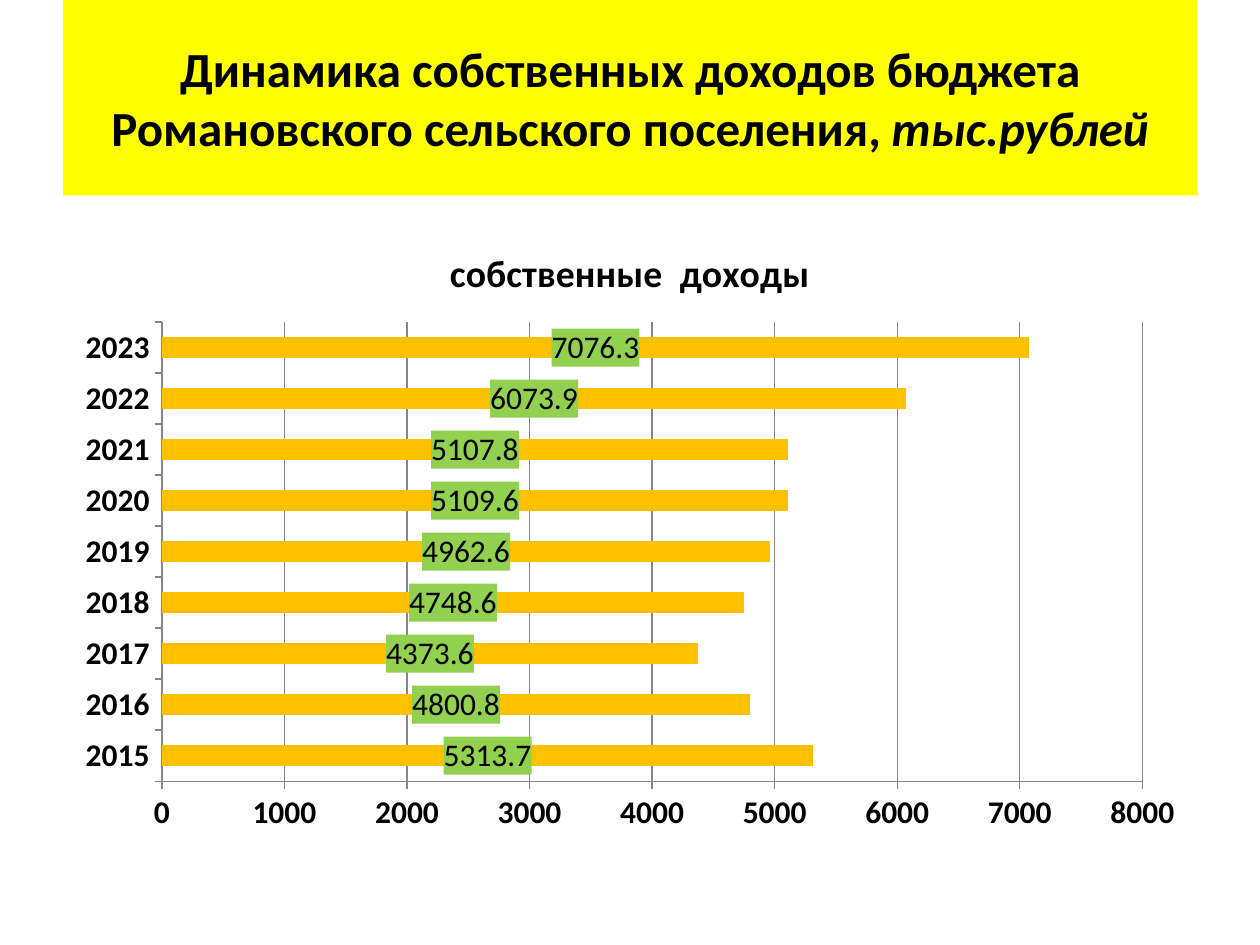
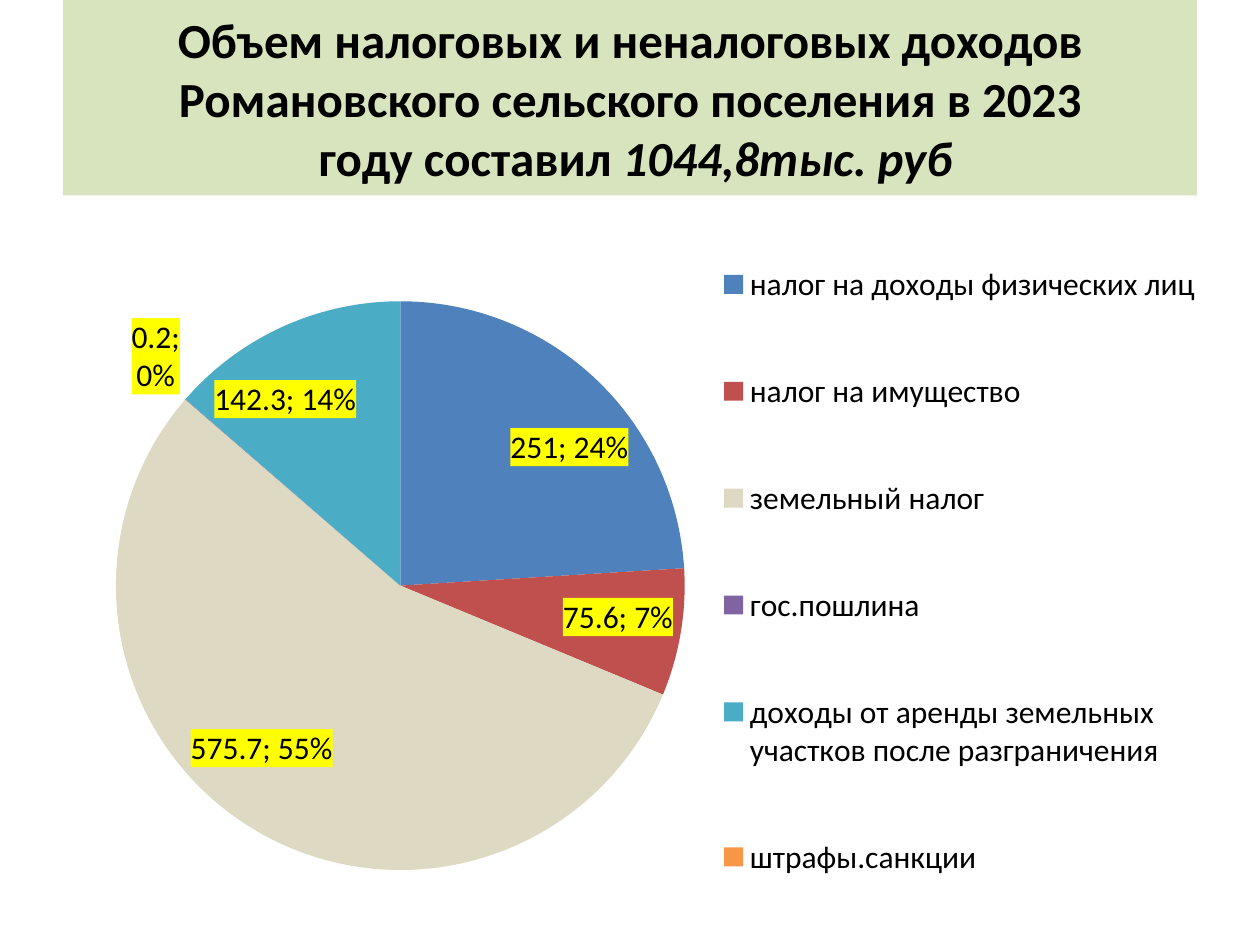
from lxml import etree
from pptx import Presentation
from pptx import util as u
from pptx.chart.data import CategoryChartData
from pptx.dml.color import RGBColor
from pptx.enum import chart as ch
from pptx.enum import text as tx
from pptx.oxml import parse_xml
from pptx.oxml.ns import nsdecls, qn

BLACK = RGBColor(0, 0, 0)
YELLOW = RGBColor(0xFF, 0xFF, 0)
SAGE = RGBColor(0xD7, 0xE4, 0xBD)
GREEN = RGBColor(0x92, 0xD0, 0x50)
AMBER = RGBColor(0xFF, 0xC0, 0)
GREY = RGBColor(0x86, 0x86, 0x86)
BLUE = RGBColor(0x4F, 0x81, 0xBD)
RED = RGBColor(0xC0, 0x50, 0x4D)
SAND = RGBColor(0xDD, 0xD9, 0xC3)
PURPLE = RGBColor(0x80, 0x64, 0xA2)
TEAL = RGBColor(0x4B, 0xAC, 0xC6)
ORANGE = RGBColor(0xF7, 0x96, 0x46)

INCOME = {"2015": 5313.7, "2016": 4800.8, "2017": 4373.6,
          "2018": 4748.6, "2019": 4962.6, "2020": 5109.6,
          "2021": 5107.8, "2022": 6073.9, "2023": 7076.3}
TAXES = [("налог на доходы физических лиц", 251, BLUE),
         ("налог на имущество", 75.6, RED),
         ("земельный налог", 575.7, SAND),
         ("гос.пошлина", 0.2, PURPLE),
         ("доходы от аренды земельных участков после разграничения",
          142.3, TEAL),
         ("штрафы.санкции", 0, ORANGE)]


class Deck:
    face = "Calibri"

    def __init__(self):
        self.prs = Presentation()
        self.prs.slide_width = u.Inches(10)
        self.prs.slide_height = u.Inches(7.5)

    def page(self):
        self.slide = self.prs.slides.add_slide(self.prs.slide_layouts[6])

    def style(self, font, size, bold=False, italic=False):
        font.name = self.face
        font.size = u.Pt(size)
        font.bold = bold
        font.italic = italic
        font.color.rgb = BLACK

    def title(self, fill, lines, accent):
        box = self.slide.shapes.add_textbox(
            u.Inches(0.5), u.Inches(0), u.Inches(9), u.Inches(1.55))
        box.fill.solid()
        box.fill.fore_color.rgb = fill
        frame = box.text_frame
        frame.word_wrap = True
        frame.vertical_anchor = tx.MSO_ANCHOR.MIDDLE
        para = frame.paragraphs[0]
        para.alignment = tx.PP_ALIGN.CENTER
        for i, line in enumerate(lines):
            if i:
                para.add_line_break()
            self.run(para, line)
        self.run(para, accent, True)

    def run(self, para, words, italic=False):
        run = para.add_run()
        run.text = words
        self.style(run.font, 28, True, italic)

    def chart(self, kind, area, name, cats, vals):
        data = CategoryChartData()
        data.categories = cats
        data.add_series(name, vals)
        spot = [u.Inches(n) for n in area]
        chart = self.slide.shapes.add_chart(kind, *spot, data).chart
        self.style(chart.font, 18)
        chart.has_title = False
        chart.has_legend = False
        return chart

    def labels(self, series, fill, pos):
        labels = series.data_labels
        labels.show_value = True
        labels.position = pos
        self.style(labels.font, 18)
        node = labels._element
        node.find(qn("c:txPr")).addprevious(parse_xml(
            f'<c:spPr {nsdecls("c", "a")}><a:solidFill>'
            f'<a:srgbClr val="{fill}"/></a:solidFill></c:spPr>'))
        return labels

    def axis(self, axis):
        axis.major_tick_mark = ch.XL_TICK_MARK.OUTSIDE
        axis.minor_tick_mark = ch.XL_TICK_MARK.NONE
        axis.format.line.color.rgb = GREY
        self.style(axis.tick_labels.font, 18, True)

    def bars(self, name, rows, area):
        chart = self.chart(ch.XL_CHART_TYPE.BAR_STACKED, area,
                           name, list(rows), list(rows.values()))
        chart.has_title = True
        run = chart.chart_title.text_frame.paragraphs[0].add_run()
        run.text = name
        self.style(run.font, 21.6, True)
        chart.chart_title.include_in_layout = False
        plot = chart.plots[0]
        plot.vary_by_categories = False
        plot.gap_width = 150
        plot.overlap = 100
        for axis in (chart.category_axis, chart.value_axis):
            self.axis(axis)
        chart.category_axis.has_major_gridlines = False
        scale = chart.value_axis
        scale.minimum_scale, scale.maximum_scale = 0, 8000
        scale.major_unit = 1000
        scale.has_major_gridlines = True
        scale.major_gridlines.format.line.color.rgb = GREY
        series = plot.series[0]
        series.format.fill.solid()
        series.format.fill.fore_color.rgb = AMBER
        self.labels(series, GREEN, ch.XL_LABEL_POSITION.CENTER)

    def layout(self, parent, box, inner=False):
        old = parent.find(qn("c:layout"))
        if old is not None:
            parent.remove(old)
        node = etree.Element(qn("c:layout"))
        man = etree.SubElement(node, qn("c:manualLayout"))
        pairs = [("layoutTarget", "inner")] if inner else []
        pairs += [("xMode", "edge"), ("yMode", "edge")]
        pairs += zip("xywh", box)
        for tag, val in pairs:
            etree.SubElement(man, qn(f"c:{tag}")).set("val", str(val))
        if inner:
            parent.insert(0, node)
        else:
            parent.find(qn("c:legendPos")).addnext(node)

    def pie(self, name, rows, area):
        cats, vals, fills = zip(*rows)
        chart = self.chart(ch.XL_CHART_TYPE.PIE, area, name, cats, vals)
        plot = chart.plots[0]
        plot.vary_by_categories = True
        series = plot.series[0]
        for i, fill in enumerate(fills):
            part = series.points[i].format.fill
            part.solid()
            part.fore_color.rgb = fill
        labels = self.labels(series, YELLOW, ch.XL_LABEL_POSITION.BEST_FIT)
        labels.show_percentage = True
        node = labels._element
        sep = etree.Element(qn("c:separator"))
        sep.text = "; "
        node.find(qn("c:showBubbleSize")).addnext(sep)
        for i in [i for i, val in enumerate(vals) if not val]:
            node.insert(0, parse_xml(
                f'<c:dLbl {nsdecls("c")}><c:idx val="{i}"/>'
                '<c:delete val="1"/></c:dLbl>'))
        chart.has_legend = True
        key = chart.legend
        key.position = ch.XL_LEGEND_POSITION.RIGHT
        key.include_in_layout = False
        self.style(key.font, 18)
        self.layout(key._element, (0.56, 0, 0.44, 1))
        field = chart.element.find(".//" + qn("c:plotArea")) \
            if hasattr(chart, "element") else \
            chart._chartSpace.find(".//" + qn("c:plotArea"))
        self.layout(field, (0.02, 0.14, 0.54, 0.76), True)


def main():
    deck = Deck()
    deck.page()
    deck.title(YELLOW, ["Динамика собственных доходов бюджета "
                        "Романовского сельского поселения, "],
               "тыс.рублей")
    deck.bars("собственные  доходы", INCOME, (0.5, 1.75, 9, 4.95))
    deck.page()
    deck.title(SAGE, ["Объем налоговых и неналоговых доходов "
                      "Романовского сельского поселения в 2023",
                      " году составил "], "1044,8тыс. руб")
    deck.pie("Series 1", TAXES, (0.55, 1.56, 9.06, 5.94))
    deck.prs.save("out.pptx")


if __name__ == "__main__":
    main()
